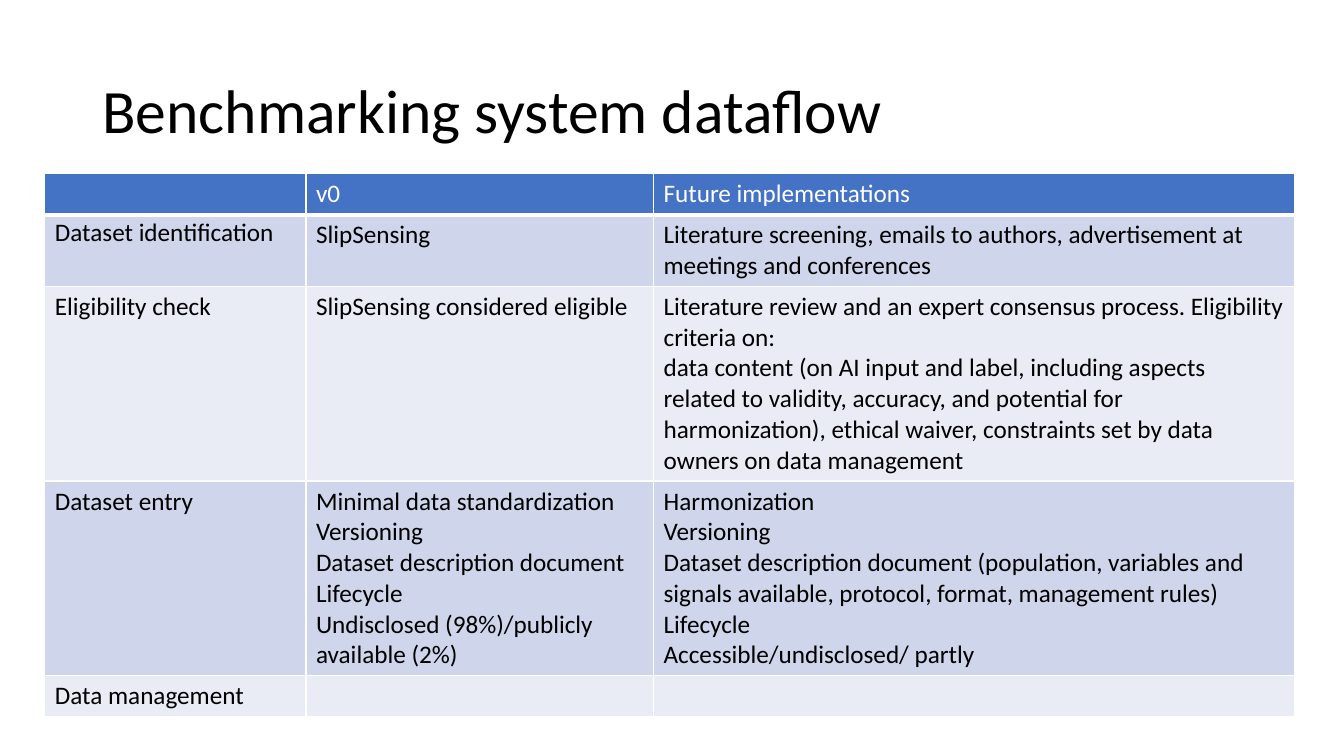
from dataclasses import dataclass
from typing import Any

from lxml.etree import SubElement
from pptx import Presentation
from pptx.dml.color import RGBColor
from pptx.enum.text import MSO_ANCHOR, PP_ALIGN
from pptx.oxml.ns import qn
from pptx.util import Cm, Pt

BLACK = RGBColor(0x00, 0x00, 0x00)
WHITE = RGBColor(0xFF, 0xFF, 0xFF)
BLUE = RGBColor(0x44, 0x72, 0xC4)
MID = RGBColor(0xCF, 0xD5, 0xEA)
PALE = RGBColor(0xE9, 0xEB, 0xF5)

TITLE_FONT = {"name": "Calibri", "size": Pt(44), "bold": False}
CELL_FONT = {"name": "Calibri", "size": Pt(18), "bold": False}
TITLE_BOX = {"left": Cm(2.33), "top": Cm(1.01), "width": Cm(29.21), "height": Cm(3.68)}
TITLE_FRAME = {"vertical_anchor": MSO_ANCHOR.MIDDLE, "word_wrap": True}
TITLE_PARA = {"alignment": PP_ALIGN.LEFT, "line_spacing": 0.9}
FIRST_PARA = {"line_spacing": 0.9, "space_before": Pt(10)}
WIDTHS = (6.58, 8.76, 16.15)
HEIGHT = 1.03


@dataclass(frozen=True)
class Stage:
    label: str
    now: str
    future: str


STAGES = (
    Stage("", "v0", "Future implementations"),
    Stage(
        "Dataset identification",
        "SlipSensing",
        "Literature screening, emails to authors, advertisement at meetings and conferences",
    ),
    Stage(
        "Eligibility check",
        "SlipSensing considered eligible",
        "Literature review and an expert consensus process. Eligibility criteria on:\n"
        "data content (on AI input and label, including aspects related to validity, "
        "accuracy, and potential for harmonization), ethical waiver, constraints set "
        "by data owners on data management",
    ),
    Stage(
        "Dataset entry",
        "Minimal data standardization\nVersioning\n"
        "Dataset description document Lifecycle\n"
        "Undisclosed (98%)/publicly available (2%)",
        "Harmonization\nVersioning\n"
        "Dataset description document (population, variables and signals available, "
        "protocol, format, management rules)\n"
        "Lifecycle\nAccessible/undisclosed/ partly",
    ),
    Stage("Data management", "", ""),
)


def apply(item: Any, form: dict[str, Any]) -> None:
    for key, value in form.items():
        setattr(item, key, value)


def write(frame: Any, text: str, form: dict[str, Any], color: RGBColor) -> None:
    frame.text = text
    for para in frame.paragraphs:
        for run in para.runs:
            apply(run.font, form)
            run.font.color.rgb = color


def edge(cell: Any, side: str, width: int) -> None:
    props = cell._tc.get_or_add_tcPr()
    line = SubElement(props, qn(f"a:ln{side}"), w=str(Pt(width)))
    fill = SubElement(line, qn("a:solidFill"))
    SubElement(fill, qn("a:srgbClr"), val=str(WHITE))


def draw_title(slide: Any) -> None:
    title = slide.shapes.title
    apply(title, TITLE_BOX)
    apply(title.text_frame, TITLE_FRAME)
    write(title.text_frame, "Benchmarking system dataflow", TITLE_FONT, BLACK)
    apply(title.text_frame.paragraphs[0], TITLE_PARA)


def draw_cell(cell: Any, text: str, row: int) -> None:
    head = row == 0
    for side in "LRTB":
        thick = (head and side == "B") or (row == 1 and side == "T")
        edge(cell, side, 3 if thick else 1)
    cell.fill.solid()
    cell.fill.fore_color.rgb = BLUE if head else MID if row % 2 else PALE
    write(cell.text_frame, text, CELL_FONT, WHITE if head else BLACK)


def draw_table(slide: Any) -> None:
    count = len(STAGES)
    table = slide.shapes.add_table(
        count, len(WIDTHS), Cm(1.13), Cm(4.38), Cm(sum(WIDTHS)), Cm(HEIGHT * count)
    ).table
    for column, width in zip(table.columns, WIDTHS):
        column.width = Cm(width)
    for row, stage in enumerate(STAGES):
        table.rows[row].height = Cm(HEIGHT)
        for col, text in enumerate((stage.label, stage.now, stage.future)):
            draw_cell(table.cell(row, col), text, row)
    apply(table.cell(1, 0).text_frame.paragraphs[0], FIRST_PARA)


def main() -> None:
    deck = Presentation()
    apply(deck, {"slide_width": Cm(33.87), "slide_height": Cm(19.05)})
    slide = deck.slides.add_slide(deck.slide_layouts[5])
    draw_title(slide)
    draw_table(slide)
    deck.save("out.pptx")


if __name__ == "__main__":
    main()
